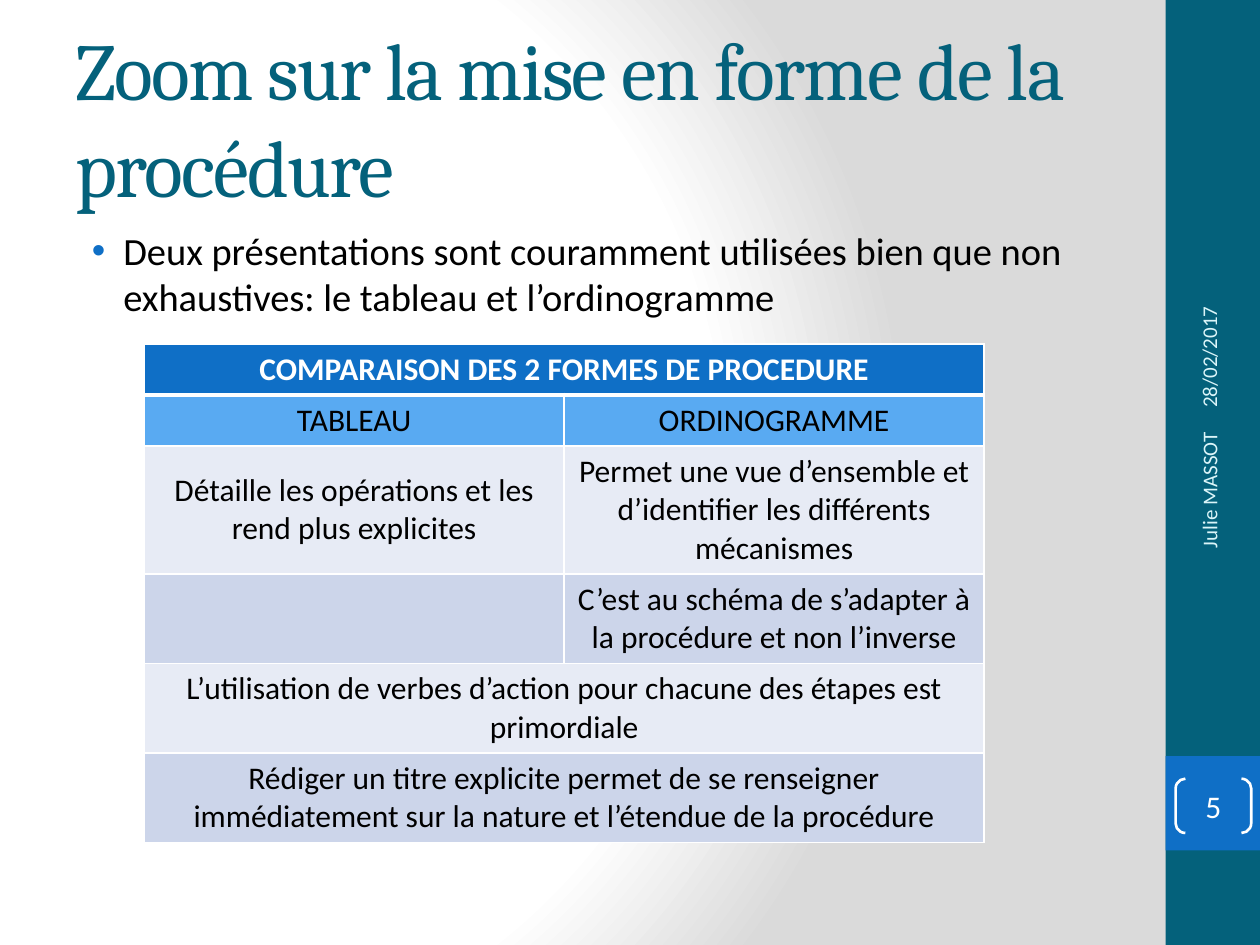
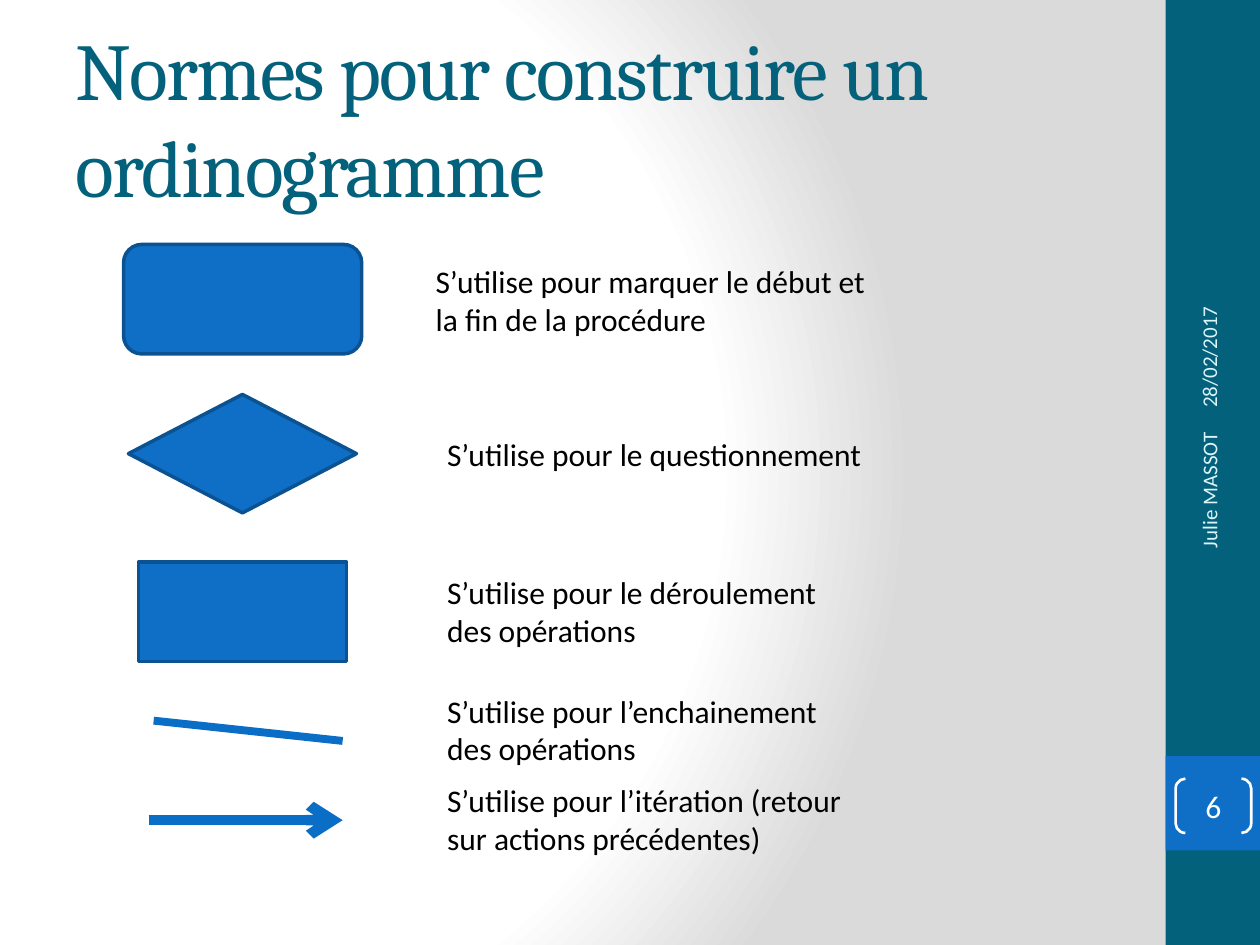
from lxml import etree
from pptx import Presentation
from pptx.dml.color import RGBColor
from pptx.enum.shapes import MSO_CONNECTOR, MSO_SHAPE
from pptx.enum.text import MSO_ANCHOR, PP_ALIGN
from pptx.oxml import parse_xml
from pptx.oxml.ns import qn
from pptx.util import Pt

LEFT, CENTER, RIGHT = PP_ALIGN.LEFT, PP_ALIGN.CENTER, PP_ALIGN.RIGHT
TOP, MIDDLE = MSO_ANCHOR.TOP, MSO_ANCHOR.MIDDLE
RECT, ROUNDED, DIAMOND = MSO_SHAPE.RECTANGLE, MSO_SHAPE.ROUNDED_RECTANGLE, MSO_SHAPE.DIAMOND
BRACKETS, STRAIGHT = MSO_SHAPE.DOUBLE_BRACKET, MSO_CONNECTOR.STRAIGHT

TEAL = RGBColor(0x04, 0x61, 0x7B)
BLUE = RGBColor(0x0F, 0x6F, 0xC6)
DARK_BLUE = RGBColor(0x0B, 0x52, 0x92)
LINE_BLUE = RGBColor(0x0A, 0x6D, 0xC6)
SKY = RGBColor(0x59, 0xAA, 0xF2)
PALE = RGBColor(0xE7, 0xEB, 0xF5)
LAVENDER = RGBColor(0xCC, 0xD5, 0xEA)
ICE = RGBColor(0xDB, 0xF5, 0xF9)
GREY = RGBColor(0xDA, 0xDA, 0xDA)
WHITE = RGBColor(0xFF, 0xFF, 0xFF)
BLACK = RGBColor(0, 0, 0)
HEADING_FONT, BODY_FONT = "Cambria", "Calibri"

WIDTH, HEIGHT = 720, 540
BAND_LEFT, BAND_WIDTH = 666, 54

DATE, AUTHOR = "28/02/2017", "Julie MASSOT"
FORMAT_TITLE = "Zoom sur la mise en forme de la procédure"
FORMAT_INTRO = ("Deux présentations sont couramment utilisées bien que non "
                "exhaustives: le tableau et l’ordinogramme")
COMPARISON = [
    (29.2, BLUE, ["COMPARAISON DES 2 FORMES DE PROCEDURE"]),
    (29.2, SKY, ["TABLEAU", "ORDINOGRAMME"]),
    (73, PALE, ["Détaille les opérations et les rend plus explicites",
                "Permet une vue d’ensemble et d’identifier les différents mécanismes"]),
    (51.2, LAVENDER, ["", "C’est au schéma de s’adapter à la procédure et non l’inverse"]),
    (51.2, PALE, ["L’utilisation de verbes d’action pour chacune des étapes est primordiale"]),
    (51.2, LAVENDER, ["Rédiger un titre explicite permet de se renseigner immédiatement "
                      "sur la nature et l’étendue de la procédure"]),
]
NORMS_TITLE = "Normes pour construire un ordinogramme"
SYMBOLS = [
    (ROUNDED, (70.6, 139.7, 136.1, 62.6)),
    (DIAMOND, (73.4, 225.4, 130.3, 67.7)),
    (RECT, (79.2, 321.1, 118.8, 56.9)),
]
LINKS = [
    ((87.8, 411.8), (195.8, 423.4), 4.5, False),
    ((85, 468.7), (195.8, 468.7), 6, True),
]
MEANINGS = [
    ((241.9, 146.2, 266.4, 51), "S’utilise pour marquer le début et la fin de la procédure"),
    ((248.4, 244.8, 253.4, 29), "S’utilise pour le questionnement"),
    ((248.4, 324, 253.4, 51), "S’utilise pour le déroulement des opérations"),
    ((248.4, 391.7, 253.4, 51), "S’utilise pour l’enchainement des opérations"),
    ((248.4, 442.8, 253.4, 51), "S’utilise pour l’itération (retour sur actions précédentes)"),
]


def write(frame, text, size, color, align=LEFT, font=BODY_FONT, bold=False):
    para = frame.paragraphs[0]
    para.alignment = align
    para.add_run().text = text
    para.font.name = font
    para.font.size = Pt(size)
    para.font.bold = bold
    para.font.color.rgb = color
    return para


def add_text(page, place, text, size, color, align=LEFT, anchor=TOP, font=BODY_FONT, turn=0):
    box = page.shapes.add_textbox(*map(Pt, place))
    box.rotation = turn
    box.text_frame.word_wrap = True
    box.text_frame.vertical_anchor = anchor
    return write(box.text_frame, text, size, color, align, font)


def add_figure(page, kind, place, fill=None, line=None, weight=0):
    figure = page.shapes.add_shape(kind, *map(Pt, place))
    figure.shadow.inherit = False
    if fill is None:
        figure.fill.background()
    else:
        figure.fill.solid()
        figure.fill.fore_color.rgb = fill
    if line is None:
        figure.line.fill.background()
    else:
        figure.line.color.rgb = line
        figure.line.width = Pt(weight)
    return figure


def add_link(page, start, end, weight, arrow):
    link = page.shapes.add_connector(STRAIGHT, *map(Pt, start + end))
    link.line.color.rgb = LINE_BLUE
    link.line.width = Pt(weight)
    if arrow:
        etree.SubElement(link.line._get_or_add_ln(), qn("a:tailEnd"), type="arrow")
    etree.SubElement(link._element.spPr, qn("a:effectLst"))


def add_glow_background(page):
    stops = "".join(f'<a:gs pos="{pos}000"><a:srgbClr val="{color}"/></a:gs>'
                    for pos, color in [(0, WHITE), (75, WHITE), (100, GREY)])
    page._element.cSld.insert(0, parse_xml(
        '<p:bg xmlns:p="http://schemas.openxmlformats.org/presentationml/2006/main" '
        'xmlns:a="http://schemas.openxmlformats.org/drawingml/2006/main"><p:bgPr>'
        f'<a:gradFill rotWithShape="1"><a:gsLst>{stops}</a:gsLst><a:path path="circle">'
        '<a:fillToRect l="20000" t="50000" r="100000" b="50000"/></a:path></a:gradFill>'
        '<a:effectLst/></p:bgPr></p:bg>'))


def add_page(deck, title, number):
    page = deck.slides.add_slide(deck.slide_layouts[6])
    add_glow_background(page)
    add_figure(page, RECT, (BAND_LEFT, 0, BAND_WIDTH, HEIGHT), TEAL)
    add_figure(page, RECT, (BAND_LEFT, 432, BAND_WIDTH, BAND_WIDTH), BLUE)
    heading = add_text(page, (36, 21.6, 600, 90), title, 46, TEAL,
                       anchor=MIDDLE, font=HEADING_FONT)
    heading.runs[0]._r.get_or_add_rPr().set("spc", "-100")
    add_text(page, (594.7, 129.6, 192.2, 28.8), DATE, 12, ICE, LEFT, MIDDLE, turn=270)
    add_text(page, (597.6, 319, 186.5, 28.8), AUTHOR, 12, ICE, RIGHT, MIDDLE, turn=270)
    badge = add_figure(page, BRACKETS, (671.8, 445, 43.2, 31), line=WHITE, weight=1.5)
    badge.adjustments[0] = 0.18
    frame = badge.text_frame
    frame.margin_left = frame.margin_right = frame.margin_top = frame.margin_bottom = 0
    frame.vertical_anchor = MIDDLE
    write(frame, str(number), 18, WHITE, CENTER)
    return page


def set_borders(cell, top, bottom):
    props = cell._tc.get_or_add_tcPr()
    for index, (side, weight) in enumerate(
            [("lnL", 1), ("lnR", 1), ("lnT", top), ("lnB", bottom)]):
        edge = etree.Element(qn(f"a:{side}"), w=str(Pt(weight)))
        fill = etree.SubElement(edge, qn("a:solidFill"))
        etree.SubElement(fill, qn("a:srgbClr"), val=str(WHITE))
        props.insert(index, edge)


def add_comparison(page):
    total = sum(height for height, _, _ in COMPARISON)
    table = page.shapes.add_table(len(COMPARISON), 2, *map(Pt, (82.4, 196.5, 480, total))).table
    for index, (height, fill, texts) in enumerate(COMPARISON):
        table.rows[index].height = Pt(height)
        cells = [table.cell(index, column) for column in range(2)]
        if len(texts) == 1:
            cells[0].merge(cells[1])
        for cell in cells:
            cell.fill.solid()
            cell.fill.fore_color.rgb = fill
            cell.vertical_anchor = MIDDLE
            set_borders(cell, 3 if index == 1 else 1, 3 if index == 0 else 1)
        for cell, text in zip(cells, texts):
            write(cell.text_frame, text, 18, BLACK if index else WHITE, CENTER, bold=index == 0)


def add_bullet(para):
    props = para._p.get_or_add_pPr()
    props.set("marL", str(Pt(27.4)))
    props.set("indent", str(Pt(-18)))
    para.space_before = Pt(4.4)
    bullet_color = etree.Element(qn("a:buClr"))
    etree.SubElement(bullet_color, qn("a:srgbClr"), val=str(BLUE))
    bullet_font = etree.Element(qn("a:buFont"), typeface="Arial")
    bullet = etree.Element(qn("a:buChar"), char="•")
    props.find(qn("a:spcBef")).addnext(bullet_color)
    bullet_color.addnext(bullet_font)
    bullet_font.addnext(bullet)


def build_format_page(deck):
    page = add_page(deck, FORMAT_TITLE, 5)
    add_bullet(add_text(page, (36, 126, 600, 378), FORMAT_INTRO, 22, BLACK))
    add_comparison(page)


def build_norms_page(deck):
    page = add_page(deck, NORMS_TITLE, 6)
    for kind, place in SYMBOLS:
        add_figure(page, kind, place, BLUE, DARK_BLUE, 2)
    for link in LINKS:
        add_link(page, *link)
    for place, text in MEANINGS:
        add_text(page, place, text, 18, BLACK)


def main():
    deck = Presentation()
    deck.slide_width, deck.slide_height = Pt(WIDTH), Pt(HEIGHT)
    build_format_page(deck)
    build_norms_page(deck)
    deck.save("out.pptx")


if __name__ == "__main__":
    main()
